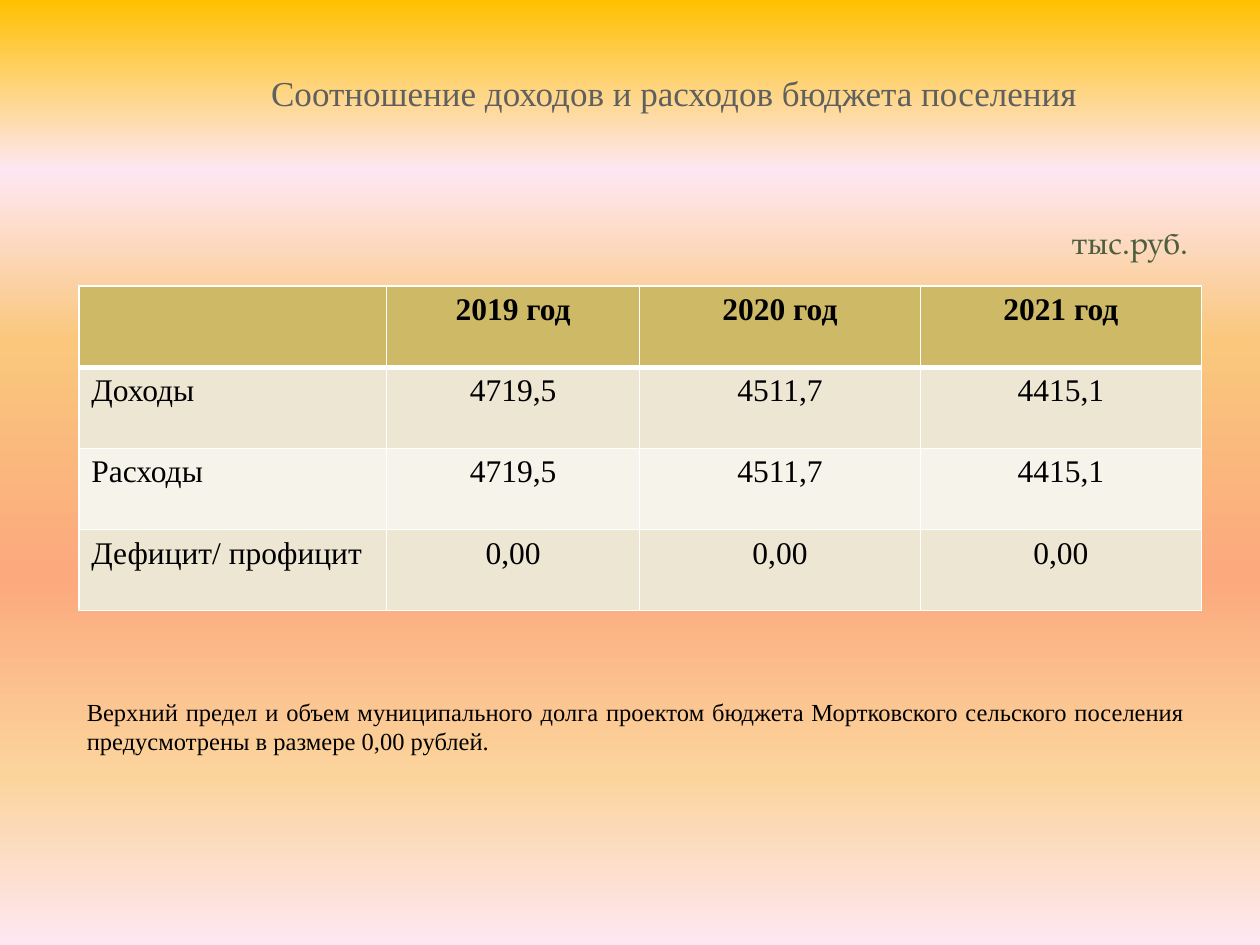
"""Build a slide comparing the income and spending of a settlement budget."""
from lxml.etree import SubElement as Sub
from pptx import Presentation
from pptx.dml.color import RGBColor as Rgb
from pptx.enum.text import MSO_ANCHOR as Anchor, PP_ALIGN as Align
from pptx.oxml.ns import qn
from pptx.util import Pt

HUES = {
    "ink": "000000", "title": "5F5F5F", "unit": "4F5E3C", "line": "FFFFFF",
    "head": "CEB966", "odd": "EDE6D3", "even": "F6F3EA",
}
STOPS = [(0, "FFC000"), (18, "FEE7F2"), (36, "FAC77D"),
         (61, "FBA97D"), (82, "FBD49C"), (100, "FEE7F2")]
ROWS = [
    ["", "2019 год", "2020 год", "2021 год"],
    ["Доходы", "4719,5", "4511,7", "4415,1"],
    ["Расходы", "4719,5", "4511,7", "4415,1"],
    ["Дефицит/ профицит", "0,00", "0,00", "0,00"],
]
WIDTHS = [176, 144.5, 160.5, 160.5]


class Deck:
    """Hold the style and the current slide."""

    def __init__(self, slide, font):
        self.slide = slide
        self.font = font

    def back(self, stops):
        fill = self.slide.background.fill
        fill.gradient()
        fill.gradient_angle = 270
        items = self.slide.element.find(".//" + qn("a:gsLst"))
        items.clear()
        for pos, hue in stops:
            stop = Sub(items, qn("a:gs"), pos=str(pos * 1000))
            Sub(stop, qn("a:srgbClr"), val=hue)

    def style(self, frame, text, size, hue, align, font=None, bold=False):
        frame.text = text
        for para in frame.paragraphs:
            para.alignment = align
            for run in para.runs:
                run.font.name = font or self.font
                run.font.size = Pt(size)
                run.font.bold = bold
                run.font.color.rgb = Rgb.from_string(HUES[hue])

    def title(self, box, text, size, hue):
        shape = self.slide.shapes.title
        shape.left, shape.top, shape.width, shape.height = map(Pt, box)
        frame = shape.text_frame
        frame.word_wrap = False
        frame.vertical_anchor = Anchor.TOP
        self.style(frame, text, size, hue, Align.CENTER)

    def text(self, box, text, size, hue, align, font=None):
        frame = self.slide.shapes.add_textbox(*map(Pt, box)).text_frame
        frame.word_wrap = True
        self.style(frame, text, size, hue, align, font)

    def edge(self, cell, row):
        props = cell._tc.get_or_add_tcPr()
        thick = {"T": 3 if row == 1 else 1, "B": 3 if row == 0 else 1}
        for side in "LRTB":
            line = Sub(props, qn("a:ln" + side), w=str(Pt(thick.get(side, 1))))
            Sub(Sub(line, qn("a:solidFill")), qn("a:srgbClr"), val=HUES["line"])

    def table(self, left, top, widths, height, rows):
        grid = self.slide.shapes.add_table(
            len(rows), len(widths), Pt(left), Pt(top),
            Pt(sum(widths)), Pt(height * len(rows))).table
        for col, width in zip(grid.columns, widths):
            col.width = Pt(width)
        for r, row in enumerate(rows):
            grid.rows[r].height = Pt(height)
            hue = "head" if r == 0 else "odd" if r % 2 else "even"
            for c, word in enumerate(row):
                cell = grid.cell(r, c)
                self.edge(cell, r)
                cell.fill.solid()
                cell.fill.fore_color.rgb = Rgb.from_string(HUES[hue])
                align = Align.CENTER if c else Align.LEFT
                self.style(cell.text_frame, word, 18, "ink", align, bold=r == 0)


def main():
    show = Presentation()
    show.slide_width, show.slide_height = Pt(720), Pt(540)
    deck = Deck(show.slides.add_slide(show.slide_layouts[5]), "Times New Roman")
    deck.back(STOPS)
    deck.title((116, 37.5, 538.5, 85),
               "Соотношение доходов и расходов бюджета поселения", 20, "title")
    deck.table(45, 163.5, WIDTHS, 46.4, ROWS)
    deck.text((546, 124, 140, 29), "тыс.руб.", 18, "unit", Align.RIGHT,
              "TeX Gyre Pagella")
    deck.text((42.5, 394.5, 641.5, 41),
              "Верхний предел и объем муниципального долга проектом бюджета "
              "Мортковского сельского поселения предусмотрены в размере "
              "0,00 рублей.", 14, "ink", Align.JUSTIFY)
    show.save("out.pptx")


if __name__ == "__main__":
    main()
